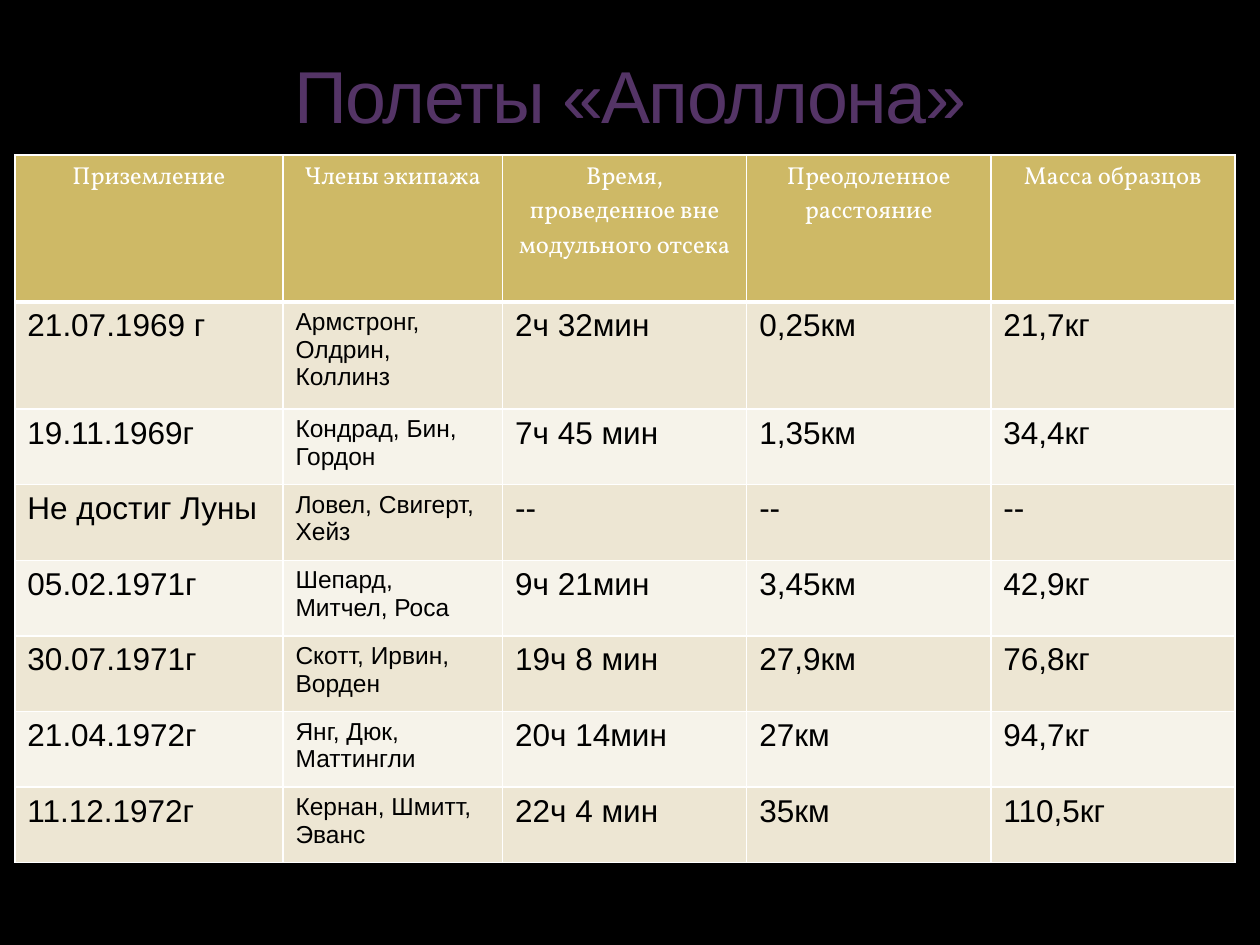
"""Build a slide with a table of the Apollo flights."""
from dataclasses import astuple, dataclass

import lxml.etree
import pptx
import pptx.dml.color
import pptx.enum.text
import pptx.oxml
import pptx.oxml.ns
import pptx.util

Pt = pptx.util.Pt
CENTER = pptx.enum.text.PP_ALIGN.CENTER
LEFT = pptx.enum.text.PP_ALIGN.LEFT
WHITE, BLACK, GOLD = "FFFFFF", "000000", "CEB966"
BANDS = ("EDE6D3", "F6F3EA")
COLS = (153.2, 125.5, 139.5, 139.5, 139.5)
ROWS = (84, 61.2) + (43.2,) * 6
HEADS = (
    "Приземление",
    "Члены экипажа",
    "Время, проведенное вне модульного отсека",
    "Преодоленное расстояние",
    "Масса образцов",
)


@dataclass
class Flight:
    date: str
    crew: str
    time: str
    range: str
    mass: str


@dataclass
class Style:
    font: str
    size: float
    color: str
    align: pptx.enum.text.PP_ALIGN = LEFT


FLIGHTS = (
    Flight("21.07.1969 г", "Армстронг, Олдрин, Коллинз", "2ч 32мин", "0,25км", "21,7кг"),
    Flight("19.11.1969г", "Кондрад, Бин, Гордон", "7ч 45 мин", "1,35км", "34,4кг"),
    Flight("Не достиг Луны", "Ловел, Свигерт, Хейз", "--", "--", "--"),
    Flight("05.02.1971г", "Шепард, Митчел, Роса", "9ч 21мин", "3,45км", "42,9кг"),
    Flight("30.07.1971г", "Скотт, Ирвин, Ворден", "19ч 8 мин", "27,9км", "76,8кг"),
    Flight("21.04.1972г", "Янг, Дюк, Маттингли", "20ч 14мин", "27км", "94,7кг"),
    Flight("11.12.1972г", "Кернан, Шмитт, Эванс", "22ч 4 мин", "35км", "110,5кг"),
)
HEAD = Style("Vollkorn", 14, WHITE, CENTER)
BODY = Style("Arial", 18, BLACK)
CREW = Style("Arial", 14, BLACK)
TITLE = Style("Arial", 42, "543466", CENTER)


def rgb(code: str) -> pptx.dml.color.RGBColor:
    """Turn a hex string into a colour."""
    return pptx.dml.color.RGBColor.from_string(code)


def paint(fill, code: str) -> None:
    """Make a fill solid."""
    fill.solid()
    fill.fore_color.rgb = rgb(code)


def write(frame, text: str, style: Style) -> None:
    """Put one styled paragraph in a text frame."""
    frame.text = text
    para = frame.paragraphs[0]
    para.alignment = style.align
    font = para.font
    font.name, font.size, font.bold = style.font, Pt(style.size), False
    font.color.rgb = rgb(style.color)


def edge(cell, base: float) -> None:
    """Draw white cell borders with a given width at the base."""
    props = cell._tc.get_or_add_tcPr()
    for spot, (side, width) in enumerate((("L", 1), ("R", 1), ("T", 1), ("B", base))):
        line = pptx.oxml.parse_xml(
            f'<a:ln{side} {pptx.oxml.ns.nsdecls("a")} w="{Pt(width)}">'
            f'<a:solidFill><a:srgbClr val="{WHITE}"/></a:solidFill></a:ln{side}>'
        )
        props.insert(spot, line)


def add_title(slide) -> None:
    """Fill and place the title."""
    title = slide.shapes.title
    title.left, title.top, title.width, title.height = Pt(36), Pt(12.2), Pt(648), Pt(70.6)
    frame = title.text_frame
    frame.auto_size = pptx.enum.text.MSO_AUTO_SIZE.NONE
    frame.vertical_anchor = pptx.enum.text.MSO_ANCHOR.BOTTOM
    write(frame, "Полеты «Аполлона»", TITLE)
    props = frame.paragraphs[0].runs[0]._r.get_or_add_rPr()
    props.set("spc", "-100")
    line = lxml.etree.Element(pptx.oxml.ns.qn("a:ln"), w=str(Pt(0.25)))
    fill = lxml.etree.SubElement(line, pptx.oxml.ns.qn("a:solidFill"))
    color = lxml.etree.SubElement(fill, pptx.oxml.ns.qn("a:srgbClr"), val="5D5B60")
    lxml.etree.SubElement(color, pptx.oxml.ns.qn("a:alpha"), val="25000")
    props.insert(0, line)


def add_flights(slide) -> None:
    """Draw the table of flights."""
    table = slide.shapes.add_table(
        len(ROWS), len(COLS), Pt(8.5), Pt(88.6), Pt(sum(COLS)), Pt(sum(ROWS))
    ).table
    for col, width in zip(table.columns, COLS):
        col.width = Pt(width)
    for row, height in zip(table.rows, ROWS):
        row.height = Pt(height)
    for i, texts in enumerate((HEADS, *map(astuple, FLIGHTS))):
        for j, text in enumerate(texts):
            cell = table.cell(i, j)
            style = HEAD if i == 0 else CREW if j == 1 else BODY
            write(cell.text_frame, text, style)
            paint(cell.fill, GOLD if i == 0 else BANDS[(i - 1) % 2])
            edge(cell, 3 if i == 0 else 1)


def main() -> None:
    """Build and save the slide."""
    deck = pptx.Presentation()
    deck.slide_width, deck.slide_height = Pt(720), Pt(540)
    slide = deck.slides.add_slide(deck.slide_layouts[5])
    paint(slide.background.fill, BLACK)
    add_flights(slide)
    add_title(slide)
    deck.save("out.pptx")


if __name__ == "__main__":
    main()
